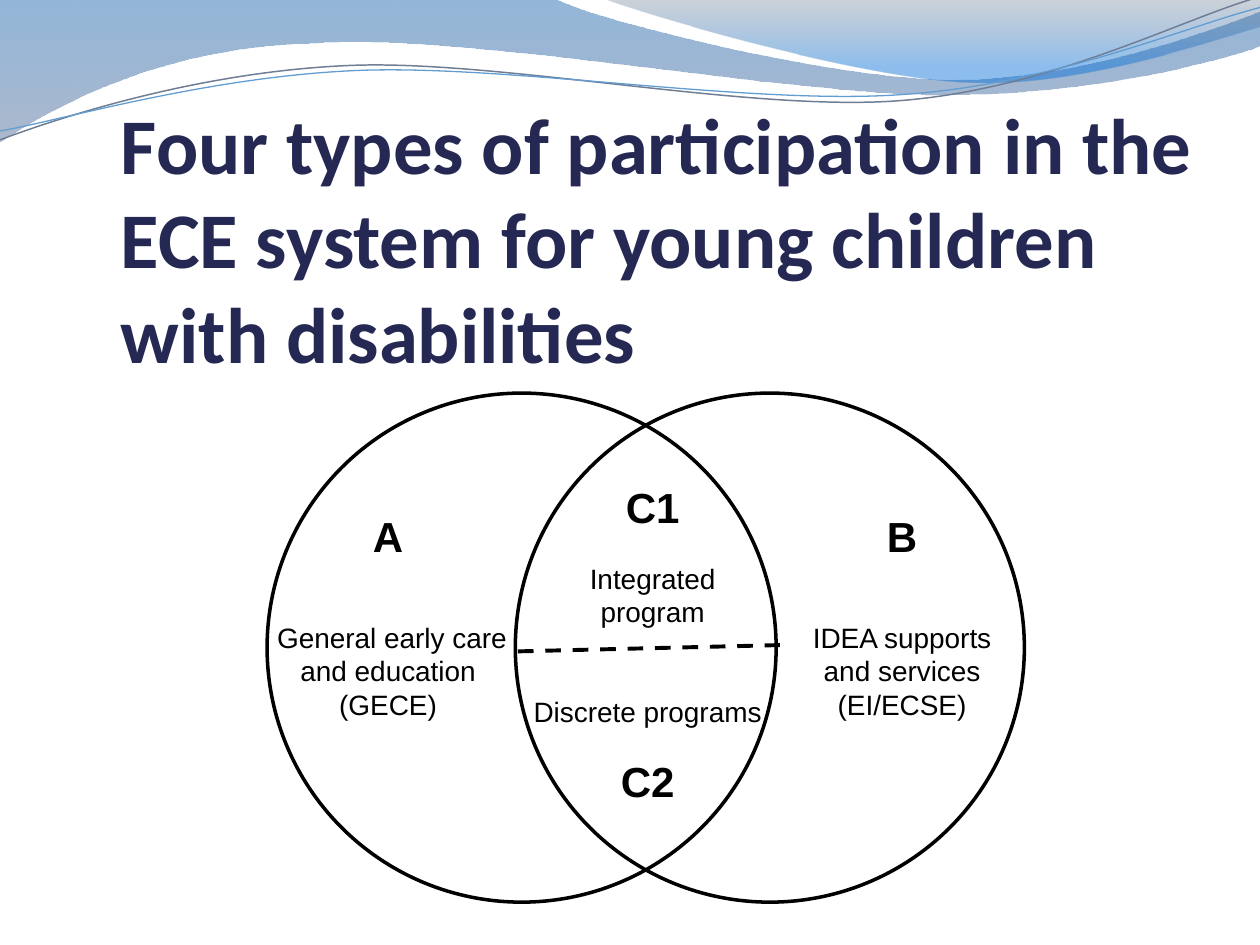
from math import cos, radians, sin

from lxml import etree
from pptx import Presentation
from pptx.dml.color import RGBColor
from pptx.enum.dml import MSO_LINE
from pptx.enum.shapes import MSO_CONNECTOR, MSO_SHAPE
from pptx.enum.text import MSO_ANCHOR, PP_ALIGN
from pptx.oxml.ns import qn
from pptx.util import Inches, Pt

OVAL = MSO_SHAPE.OVAL
STRAIGHT = MSO_CONNECTOR.STRAIGHT
DASH = MSO_LINE.DASH
BOTTOM, TOP = MSO_ANCHOR.BOTTOM, MSO_ANCHOR.TOP
LEFT, CENTER = PP_ALIGN.LEFT, PP_ALIGN.CENTER

BLACK, NAVY = "000000", "242852"
STRAND_TILT = 357.3


def rgb(hex_color):
    return RGBColor.from_string(hex_color)


def turn(point, center, degrees):
    """Point turned clockwise about the center."""
    angle = radians(degrees)
    dx, dy = point[0] - center[0], point[1] - center[1]
    return (center[0] + dx * cos(angle) - dy * sin(angle),
            center[1] + dx * sin(angle) + dy * cos(angle))


class SlideBuilder:
    def __init__(self, slide, font="Arial", color=BLACK):
        self.shapes = slide.shapes
        self.font = font
        self.color = color

    def outline(self, line, color, width):
        line.color.rgb = rgb(color)
        line.width = Pt(width)

    def freeform(self, start, segments, close):
        """Outline of segments: one point for a line, three for a cubic Bézier."""
        builder = self.shapes.build_freeform(*map(Inches, start), scale=1.0)
        builder.add_line_segments(
            [tuple(map(Inches, segment[-1])) for segment in segments], close=close)
        shape = builder.convert_to_shape()
        shape.shadow.inherit = False
        lines = list(shape.element.iter(qn("a:lnTo")))
        for node, segment in zip(lines, segments):
            if len(segment) == 3:
                node.tag = qn("a:cubicBezTo")
                for index, (x, y) in enumerate(segment[:2]):
                    node.insert(index, etree.Element(
                        qn("a:pt"), x=str(Inches(x) - shape.left),
                        y=str(Inches(y) - shape.top)))
        return shape

    def wave(self, start, segments, stops):
        """Closed band with a vertical gradient; stops are (position, colour, opacity %)."""
        shape = self.freeform(start, segments, close=True)
        shape.line.fill.background()
        shape.fill.gradient()
        shape.fill.gradient_angle = 270
        for stop, (position, color, _) in zip(shape.fill.gradient_stops, stops):
            stop.position = position
            stop.color.rgb = rgb(color)
        for node, (_, _, opacity) in zip(shape.element.iter(qn("a:srgbClr")), stops):
            etree.SubElement(node, qn("a:alpha"), val=str(opacity * 1000))

    def strand(self, start, segments, center, color, width):
        """Open curve kept level in its frame, which is then tilted into place."""
        def level(point):
            return turn(point, center, -STRAND_TILT)

        shape = self.freeform(
            level(start), [[level(p) for p in segment] for segment in segments],
            close=False)
        shape.rotation = STRAND_TILT
        shape.fill.background()
        self.outline(shape.line, color, width)

    def circle(self, left, top, size):
        shape = self.shapes.add_shape(
            OVAL, Inches(left), Inches(top), Inches(size), Inches(size))
        shape.shadow.inherit = False
        shape.fill.background()
        self.outline(shape.line, BLACK, 2)

    def dashed_line(self, x1, y1, x2, y2):
        line = self.shapes.add_connector(
            STRAIGHT, Inches(x1), Inches(y1), Inches(x2), Inches(y2))
        self.outline(line.line, BLACK, 2.25)
        line.line.dash_style = DASH
        etree.SubElement(line.element.spPr, qn("a:effectLst"))

    def text(self, box, paragraphs, align=CENTER, anchor=TOP,
             margins=(0.1, 0.05, 0.1, 0.05), font=None, color=None):
        """Text box; paragraphs are (text, size, bold, space before in points)."""
        frame = self.shapes.add_textbox(*map(Inches, box)).text_frame
        frame.word_wrap = True
        frame.vertical_anchor = anchor
        (frame.margin_left, frame.margin_top,
         frame.margin_right, frame.margin_bottom) = map(Inches, margins)
        frame.text = "\n".join(text for text, *_ in paragraphs)
        for paragraph, (_, size, bold, before) in zip(frame.paragraphs, paragraphs):
            paragraph.alignment = align
            paragraph.space_before = Pt(before)
            for run in paragraph.runs:
                run.font.name = font or self.font
                run.font.size = Pt(size)
                run.font.bold = bold
                run.font.color.rgb = rgb(color or self.color)


def draw_waves(page):
    page.wave((0, 0), [
        [(4.4, -0.01)],
        [(4.76, 0.17), (6.64, 0.63), (7.58, 0.63)],
        [(8.53, 0.63), (9.58, 0.26), (10, 0.09)],
        [(10.01, 0.36)],
        [(9.83, 0.44), (8.7, 0.76), (7.46, 0.75)],
        [(6.22, 0.75), (3.82, 0.28), (2.57, 0.34)],
        [(1.29, 0.36), (0.46, 0.83), (-0.01, 1.13)],
    ], [(0, "125EAA", 45), (1, "697FA4", 55)])
    page.wave((4.79, -0.01), [
        [(5.09, 0.11), (6.82, 0.62), (7.69, 0.65)],
        [(8.56, 0.69), (9.61, 0.32), (10, 0.21)],
        [(10, 0)],
    ], [(0, "596982", 30), (0.8, "0670DA", 45)])

    page.strand((0, 1.11), [
        [(0.48, 0.93), (1.58, 0.57), (2.77, 0.52)],
        [(3.95, 0.47), (5.93, 0.89), (7.13, 0.8)],
        [(8.33, 0.71), (9.38, 0.15), (9.98, -0.02)],
    ], (4.99, 0.58), "707E95", 0.85)
    page.strand((0, 1.04), [
        [(0.47, 0.96), (1.64, 0.61), (2.83, 0.56)],
        [(4.03, 0.51), (5.97, 0.84), (7.17, 0.75)],
        [(8.36, 0.67), (9.41, 0.21), (10, 0.06)],
    ], (5, 0.59), "629DD1", 0.75)


def draw_venn(page):
    for left in (2.12, 4.09):
        page.circle(left, 3.12, 4.04)

    page.text((2.02, 4, 2.12, 1.78), [
        ("A", 24, True, 0),
        (" General early care and education", 16, False, 34),
        ("(GECE)", 16, False, 0)])
    page.text((4.16, 3.77, 2.04, 1.28), [
        ("C1", 24, True, 0),
        ("Integrated program", 16, False, 17)])
    page.text((6.31, 4, 1.7, 1.78), [
        ("B", 24, True, 0),
        ("IDEA supports and services", 16, False, 34),
        ("(EI/ECSE)", 16, False, 0)])
    page.text((4.08, 5.46, 2.12, 1.01), [
        ("Discrete programs", 16, False, 0),
        ("C2", 24, True, 16)])
    page.dashed_line(4.11, 5.17, 6.19, 5.12)


def main():
    prs = Presentation()
    prs.slide_width, prs.slide_height = Inches(10), Inches(7.5)
    page = SlideBuilder(prs.slides.add_slide(prs.slide_layouts[6]))
    draw_waves(page)
    page.text(
        (0.96, 0.51, 9.04, 3.24),
        [("Four types of participation in the ECE system for young children "
          "with disabilities", 45, True, 0)],
        align=LEFT, anchor=BOTTOM, margins=(0, 0.05, 0, 0.74),
        font="Calibri", color=NAVY)
    draw_venn(page)
    prs.save("out.pptx")


if __name__ == "__main__":
    main()
